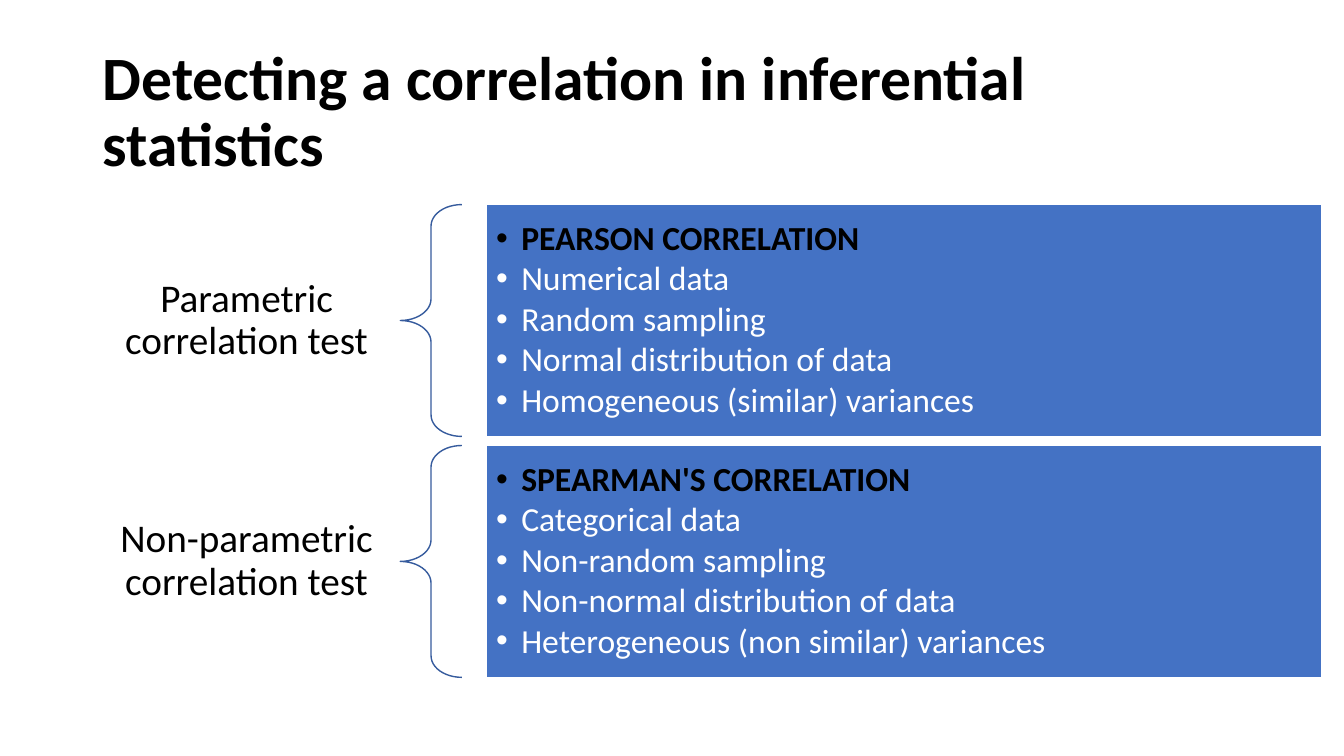
from pptx import Presentation
from pptx import util as u
from pptx.dml.color import RGBColor
from pptx.enum import shapes, text

deck = Presentation()
deck.slide_width, deck.slide_height = u.Inches(13.33), u.Inches(7.5)
slide = deck.slides.add_slide(deck.slide_layouts[3])


def color(code):
    return RGBColor.from_string(code)


def write(shape, lines, size, bold=False, ink="000000", rest=None, align="LEFT",
          after=0, inset=(0.1, 0.05), hang=0):
    frame = shape.text_frame
    frame.text = "\n".join(lines)
    frame.word_wrap = True
    frame.auto_size = text.MSO_AUTO_SIZE.NONE
    frame.vertical_anchor = text.MSO_ANCHOR.MIDDLE
    frame.margin_left = frame.margin_right = u.Inches(inset[0])
    frame.margin_top = frame.margin_bottom = u.Inches(inset[1])
    for row, para in enumerate(frame.paragraphs):
        para.alignment = text.PP_ALIGN[align]
        para.line_spacing = 0.9
        para.space_before, para.space_after = u.Pt(0), u.Pt(after)
        if hang:
            props = para._p.get_or_add_pPr()
            props.set("marL", str(u.Inches(hang)))
            props.set("indent", str(-u.Inches(hang)))
        font = para.runs[0].font
        font.name, font.size = "Calibri", u.Pt(size)
        font.bold = bold and row == 0
        font.color.rgb = color(rest if rest and row else ink)


tests = [
    ("Parametric correlation test",
     ["PEARSON CORRELATION", "Numerical data", "Random sampling",
      "Normal distribution of data", "Homogeneous (similar) variances"]),
    ("Non-parametric correlation test",
     ["SPEARMAN'S CORRELATION", "Categorical data", "Non-random sampling",
      "Non-normal distribution of data", "Heterogeneous (non similar) variances"]),
]
left, top, high, pitch = 0.92, 2.03, 2.3, 2.39
wide, arm, gap = 3.05, 0.61, 0.24

title = slide.shapes.title
title.left, title.top = u.Inches(left), u.Inches(0.4)
title.width, title.height = u.Inches(11.5), u.Inches(1.45)
write(title, ["Detecting a correlation in inferential statistics"], 44, bold=True)

for row, (name, facts) in enumerate(tests):
    y = u.Inches(top + row * pitch)
    tall = u.Inches(high)

    label = slide.shapes.add_textbox(u.Inches(left), y, u.Inches(wide), tall)
    write(label, [name], 28, align="CENTER", inset=(0.22, 0.08))

    brace = slide.shapes.add_shape(shapes.MSO_SHAPE.LEFT_BRACE,
                                   u.Inches(left + wide), y, u.Inches(arm), tall)
    brace.adjustments[0], brace.adjustments[1] = 0.35, 0.5
    brace.shadow.inherit = False
    brace.fill.background()
    brace.line.color.rgb = color("365B9D")
    brace.line.width = u.Pt(1)

    panel = slide.placeholders[row + 1]
    panel.left, panel.top = u.Inches(left + wide + arm + gap), y
    panel.width, panel.height = u.Inches(8.29), tall
    panel.fill.solid()
    panel.fill.fore_color.rgb = color("4472C4")
    panel.line.color.rgb = color("FFFFFF")
    panel.line.width = u.Pt(1)
    write(panel, facts, 24, bold=True, rest="FFFFFF", after=3,
          inset=(0.1, 0.1), hang=0.25)

deck.save("out.pptx")
